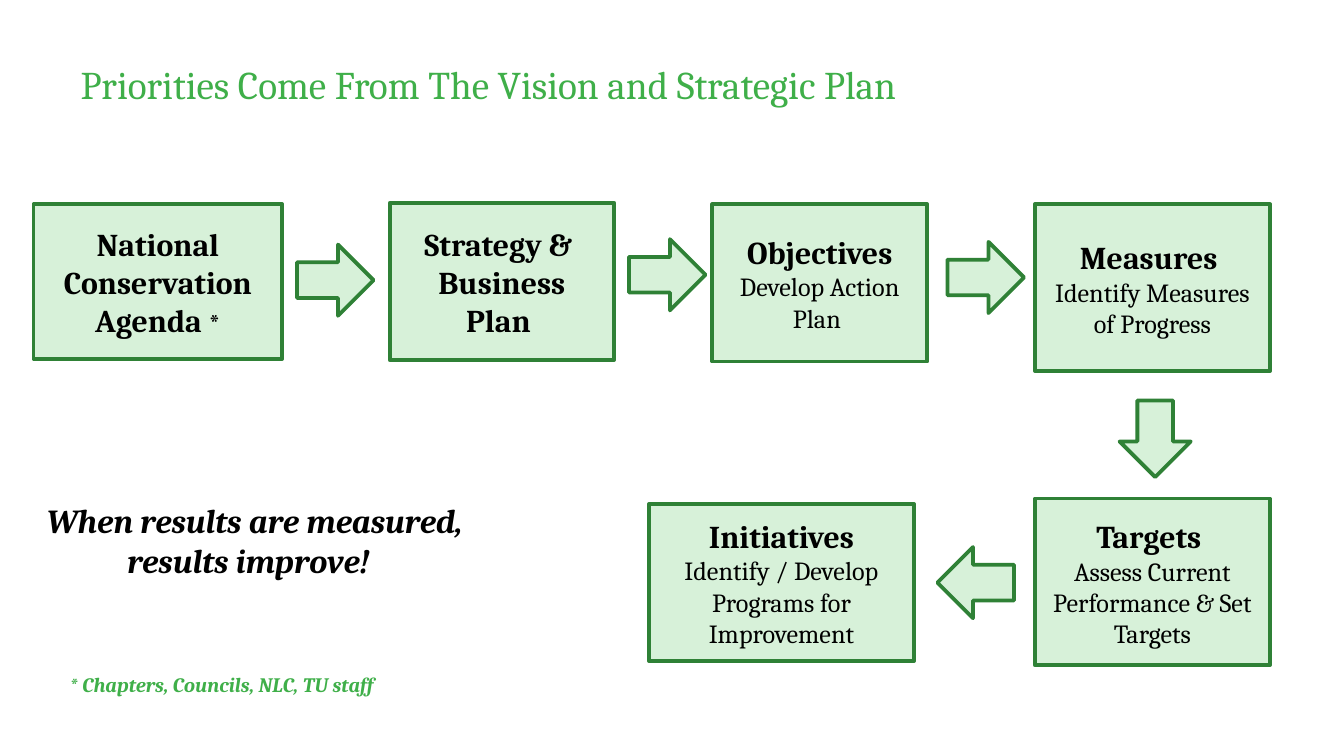
from pptx import Presentation
from pptx.dml.color import RGBColor
from pptx.enum.shapes import MSO_SHAPE as SHAPE
from pptx.enum.text import MSO_ANCHOR as ANCHOR, MSO_AUTO_SIZE as FIT, PP_ALIGN as ALIGN
from pptx.util import Inches, Pt

BLACK = RGBColor(0x00, 0x00, 0x00)
GREEN = RGBColor(0x3F, 0xAF, 0x49)
DARK_GREEN = RGBColor(0x2F, 0x81, 0x36)
PALE_GREEN = RGBColor(0xD7, 0xF1, 0xD9)
FONT = "Cambria"
CELL = Inches(0.1)  # the slide is a grid of 100 columns by 56.25 rows

HEAD = dict(size=Pt(17), bold=True)
DETAIL = dict(size=Pt(14), bold=False)
MARK = dict(size=Pt(14), bold=True)
GAP = dict(size=Pt(18), bold=False)
SLOGAN = dict(size=Pt(18), bold=True, italic=True)
NOTE = dict(size=Pt(11), bold=True, italic=True)

# Grid box (column, row, width, height), then paragraphs of (text, format) runs
STEPS = [
    ((2.5, 15.2, 18.5, 11.5), [[("National Conservation", HEAD)],
                               [("Agenda ", HEAD), ("*", MARK)]]),
    ((29, 15.1, 16.7, 11.7), [[("Strategy & ", HEAD)], [("Business Plan ", HEAD)]]),
    ((53, 15.2, 16, 11.7), [[("Objectives", HEAD)], [("Develop Action Plan ", DETAIL)]]),
    ((77, 15.2, 17.5, 12.4), [[("Measures", HEAD), (" ", GAP)],
                              [("Identify Measures of Progress", DETAIL)]]),
    ((77, 37.1, 17.5, 12.4), [[("Targets", HEAD), (" ", GAP)],
                              [("Assess Current Performance & Set Targets", DETAIL)]]),
    ((48.3, 37.5, 19.7, 11.7), [[("Initiatives", HEAD)],
                                [("Identify / Develop Programs for Improvement", DETAIL)]]),
]
# Centre column, centre row, rotation
ARROWS = [(24.95, 20.85, 0), (49.65, 20.45, 0), (73.35, 20.65, 0),
          (85.95, 32.65, 90), (72.6, 43.35, 180)]
ARROW_SIZE = (5.7, 5.3)


def grid(box):
    return [round(n * CELL) for n in box]


def write(tf, paragraphs, color=BLACK, align=ALIGN.LEFT):
    for i, runs in enumerate(paragraphs):
        p = tf.paragraphs[0] if i == 0 else tf.add_paragraph()
        p.alignment = align
        for text, style in runs:
            r = p.add_run()
            r.text = text
            r.font.color.rgb = color
            for name, value in dict(name=FONT, **style).items():
                setattr(r.font, name, value)


def add_green_shape(s, kind, box):
    sp = s.shapes.add_shape(kind, *grid(box))
    sp.shadow.inherit = False
    sp.fill.solid()
    sp.fill.fore_color.rgb = PALE_GREEN
    sp.line.color.rgb = DARK_GREEN
    sp.line.width = Pt(2)
    return sp


def add_step(s, box, paragraphs):
    tf = add_green_shape(s, SHAPE.RECTANGLE, box).text_frame
    tf.word_wrap = True
    tf.vertical_anchor = ANCHOR.MIDDLE
    write(tf, paragraphs, align=ALIGN.CENTER)


def add_arrow(s, col, row, rotation):
    w, h = ARROW_SIZE
    sp = add_green_shape(s, SHAPE.RIGHT_ARROW, (col - w / 2, row - h / 2, w, h))
    sp.rotation = rotation


def add_title(s, box, text):
    title = s.shapes.title
    title.left, title.top, title.width, title.height = grid(box)
    tf = title.text_frame
    for name, value in dict(word_wrap=False, auto_size=FIT.NONE,
                            vertical_anchor=ANCHOR.TOP).items():
        setattr(tf, name, value)
    write(tf, [[(text, dict(size=Pt(21)))]], GREEN)


def add_text(s, box, lines, style, color=BLACK):
    tf = s.shapes.add_textbox(*grid(box)).text_frame
    tf.word_wrap = True
    write(tf, [[(line, style)] for line in lines], color)
    return tf


def add_slogan(s, box):
    """Two lines, the second indented by six columns."""
    tf = add_text(s, box, ["When results are measured,", "results improve!"], SLOGAN)
    tf.paragraphs[1]._p.get_or_add_pPr().set("marL", str(6 * CELL))


def main():
    prs = Presentation()
    prs.slide_width, prs.slide_height = grid((100, 56.25))
    s = prs.slides.add_slide(prs.slide_layouts[5])
    add_title(s, (5, 4, 70.1, 4.5), "Priorities Come From The Vision and Strategic Plan")
    for box, paragraphs in STEPS:
        add_step(s, box, paragraphs)
    for arrow in ARROWS:
        add_arrow(s, *arrow)
    add_slogan(s, (2.5, 36.7, 39.3, 7.1))
    add_text(s, (4.2, 49.5, 39.3, 2.9), ["* Chapters, Councils, NLC, TU staff"], NOTE, GREEN)
    prs.save("out.pptx")


if __name__ == "__main__":
    main()
